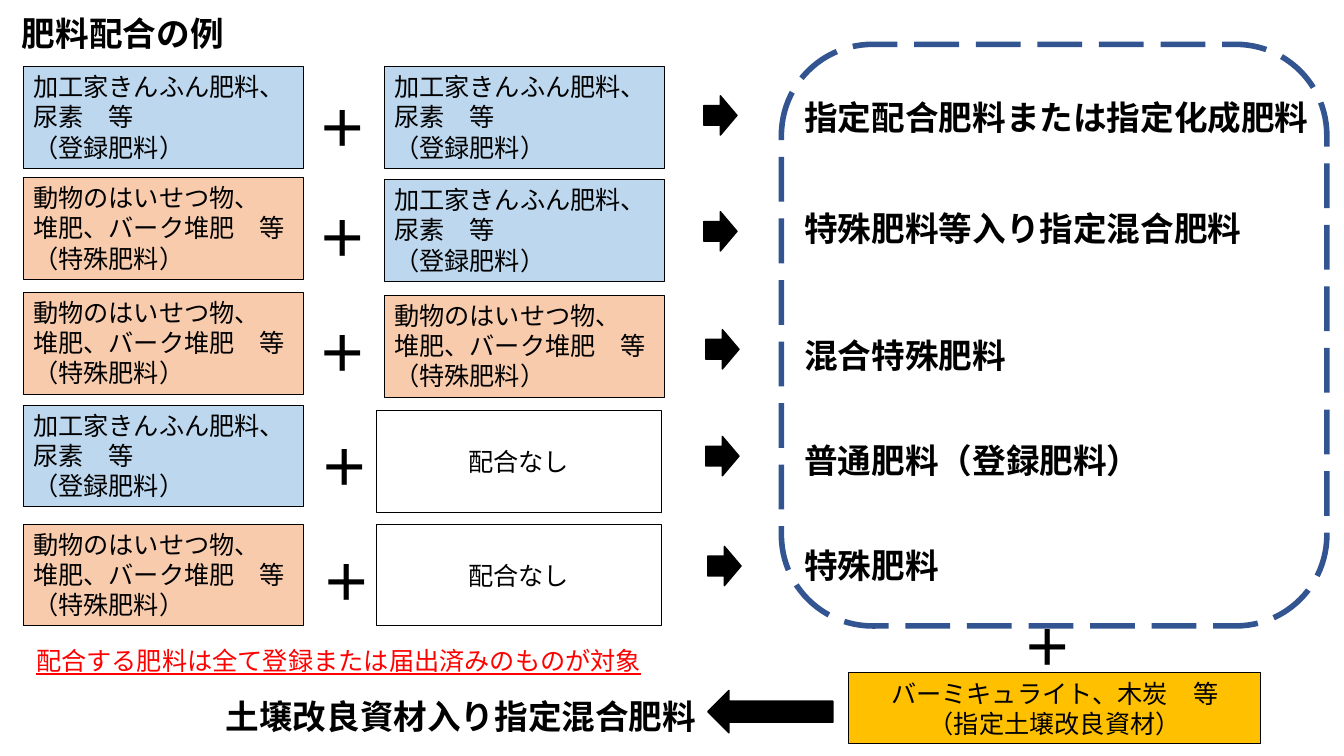
"""Build a slide showing which fertilizer class each blend of materials yields."""
from pptx import Presentation
from pptx.dml.color import RGBColor
from pptx.enum import dml, shapes, text
from pptx.oxml import ns
from pptx.util import Inches, Pt

FONT = "Noto Sans CJK JP"
BLACK = RGBColor(0x00, 0x00, 0x00)
WHITE = RGBColor(0xFF, 0xFF, 0xFF)
RED = RGBColor(0xFF, 0x00, 0x00)
BLUE = RGBColor(0xBD, 0xD7, 0xEE)
ORANGE = RGBColor(0xF8, 0xCB, 0xAD)
GOLD = RGBColor(0xFF, 0xC0, 0x00)
NAVY = RGBColor(0x32, 0x54, 0x91)

REGISTERED = ("加工家きんふん肥料、\n尿素　等\n（登録肥料）", BLUE)
SPECIAL = ("動物のはいせつ物、\n堆肥、バーク堆肥　等\n（特殊肥料）", ORANGE)
NOTHING = ("配合なし", WHITE)

deck = Presentation()
deck.slide_width, deck.slide_height = Inches(13.33), Inches(7.5)
page = deck.slides.add_slide(deck.slide_layouts[6])


def add_box(kind, area, fill, line=BLACK, weight=0.75):
    box = page.shapes.add_shape(kind, *map(Inches, area))
    box.shadow.inherit = False
    if fill is None:
        box.fill.background()
    else:
        box.fill.solid()
        box.fill.fore_color.rgb = fill
    box.line.color.rgb = line
    box.line.width = Pt(weight)
    return box


def write(words, area, size=24, color=BLACK, bold=True, centred=False, box=None):
    box = box or page.shapes.add_textbox(*map(Inches, area))
    frame = box.text_frame
    frame.text = words
    frame.word_wrap = True
    frame.vertical_anchor = text.MSO_ANCHOR.MIDDLE if centred else text.MSO_ANCHOR.TOP
    for para in frame.paragraphs:
        para.alignment = text.PP_ALIGN.CENTER if centred else text.PP_ALIGN.LEFT
        para.line_spacing = Pt(size * 1.2)
        for span in para.runs:
            span.font.name = FONT
            span.font.size = Pt(size)
            span.font.bold = bold
            span.font.color.rgb = color
            east_asian = span.font._element.makeelement(ns.qn("a:ea"), {"typeface": FONT})
            span.font._element.find(ns.qn("a:latin")).addnext(east_asian)
    return box


write("肥料配合の例", (0.12, 0.08, 2.97, 0.5))

material_boxes = [
    (REGISTERED, 0.23, 0.66, 2.78), (REGISTERED, 3.81, 0.66, 2.78),
    (SPECIAL, 0.23, 1.76, 2.78), (REGISTERED, 3.81, 1.78, 2.78),
    (SPECIAL, 0.23, 2.9, 2.78), (SPECIAL, 3.81, 2.93, 2.78),
    (REGISTERED, 0.23, 4.02, 2.78), (NOTHING, 3.73, 4.07, 2.83),
    (SPECIAL, 0.23, 5.2, 2.78), (NOTHING, 3.73, 5.2, 2.83),
]
for material, left, top, width in material_boxes:
    words, fill = material
    area = (left, top, width, 1.01)
    box = add_box(shapes.MSO_SHAPE.RECTANGLE, area, fill)
    write(words, area, 18, bold=False, centred=material is NOTHING, box=box)

results = [
    ("指定配合肥料または指定化成肥料", 0.91),
    ("特殊肥料等入り指定混合肥料", 2.01),
    ("混合特殊肥料", 3.27),
    ("普通肥料（登録肥料）", 4.32),
    ("特殊肥料", 5.36),
]
for words, top in results:
    write(words, (7.88, top, 5.5, 0.5))

plus_signs = [(3.05, 0.91), (3.05, 2.01), (3.05, 3.15), (3.07, 4.28), (3.09, 5.42),
              (10.04, 6.06)]
for left, top in plus_signs:
    write("＋", (left, top, 0.84, 0.71), 36)

result_arrows = [(6.98, 0.95), (6.98, 2.1), (7, 3.27), (7, 4.33), (7.02, 5.42)]
for left, top in result_arrows:
    add_box(shapes.MSO_SHAPE.RIGHT_ARROW, (left, top, 0.33, 0.39), BLACK, weight=1)

results_frame = add_box(shapes.MSO_SHAPE.ROUNDED_RECTANGLE, (7.75, 0.44, 5.41, 5.77),
                        None, NAVY, 4)
results_frame.line.dash_style = dml.MSO_LINE.LONG_DASH

soil_area = (8.42, 6.67, 4.08, 0.71)
soil_box = add_box(shapes.MSO_SHAPE.RECTANGLE, soil_area, GOLD)
write("バーミキュライト、木炭　等\n（指定土壌改良資材）", soil_area, 18,
      bold=False, centred=True, box=soil_box)
soil_arrow = add_box(shapes.MSO_SHAPE.RIGHT_ARROW, (7.02, 6.85, 1.24, 0.42), BLACK, weight=1)
soil_arrow.rotation = 180
write("土壌改良資材入り指定混合肥料", (2.14, 6.85, 5.5, 0.5))

note = write("配合する肥料は全て登録または届出済みのものが対象", (0.26, 6.35, 6.31, 0.4),
             18, RED, bold=False)
note.text_frame.paragraphs[0].runs[0].font.underline = True

deck.save("out.pptx")
